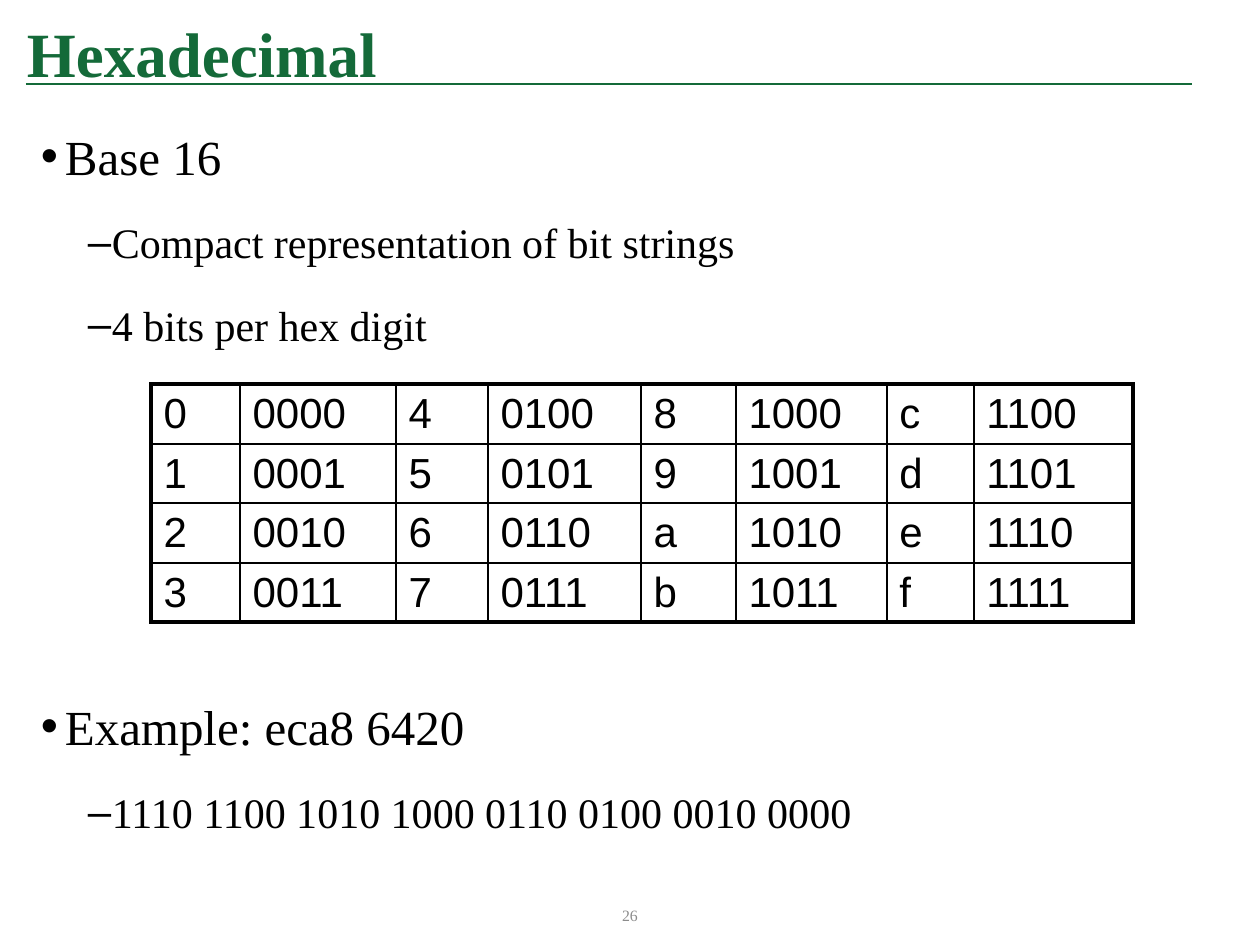
from lxml import etree
from pptx import Presentation
from pptx import util as u
from pptx.dml.color import RGBColor
from pptx.enum import shapes, text
from pptx.oxml.ns import qn

PX = 914400 // 126
SERIF, SANS = "Times New Roman", "Arial"
GREEN, BLACK, GRAY = "146A39", "000000", "8C8C8C"

TITLE = "Hexadecimal"
PAGE_NUMBER = "26"
OUTLINES = [
    (97, 270, [(0, "Base 16"),
               (1, "Compact representation of bit strings"),
               (1, "4 bits per hex digit")]),
    (667, 180, [(0, "Example: eca8 6420"),
                (1, "1110 1100 1010 1000 0110 0100 0010 0000")]),
]
LEVELS = [
    {"bullet": "•", "margin": 24, "size": 28, "before": 7.5},
    {"bullet": "–", "margin": 71, "size": 24, "before": 3.7},
]
HANGING = 24
COLUMN_WIDTHS = [89, 156, 92, 153, 95, 151, 87, 159]
ROW_HEIGHTS = [60, 59, 60, 59]
ROWS = [
    ["0", "0000", "4", "0100", "8", "1000", "c", "1100"],
    ["1", "0001", "5", "0101", "9", "1001", "d", "1101"],
    ["2", "0010", "6", "0110", "a", "1010", "e", "1110"],
    ["3", "0011", "7", "0111", "b", "1011", "f", "1111"],
]
OUTER, GROUP, INNER = 2.25, 1.5, 1


def px(*values):
    return [u.Emu(value * PX) for value in values]


def color(value):
    return RGBColor.from_string(value)


def add_run(paragraph, words, size, font, ink, bold=False):
    run = paragraph.add_run()
    run.text = words
    run.font.size = u.Pt(size)
    run.font.name = font
    run.font.bold = bold
    run.font.color.rgb = color(ink)


def add_text_frame(slide, *box):
    frame = slide.shapes.add_textbox(*px(*box)).text_frame
    frame.word_wrap = True
    frame.margin_left = frame.margin_right = 0
    frame.margin_top = frame.margin_bottom = 0
    return frame


def add_outline(slide, top, height, items):
    frame = add_text_frame(slide, 41, top, 1180, height)
    for index, (level, words) in enumerate(items):
        style = LEVELS[level]
        paragraph = frame.add_paragraph() if index else frame.paragraphs[0]
        paragraph.level = level
        properties = paragraph._p.get_or_add_pPr()
        properties.set("marL", str(style["margin"] * PX))
        properties.set("indent", str(-HANGING * PX))
        etree.SubElement(properties, qn("a:buFont"), typeface=SANS)
        etree.SubElement(properties, qn("a:buChar"), char=style["bullet"])
        paragraph.line_spacing = 1.5
        if index:
            paragraph.space_before = u.Pt(style["before"])
        paragraph.font.size = u.Pt(style["size"])
        add_run(paragraph, words, style["size"], SERIF, BLACK)


def add_border(cell, side, width):
    line = etree.SubElement(cell._tc.get_or_add_tcPr(), qn("a:ln" + side),
                            w=str(u.Pt(width)))
    fill = etree.SubElement(line, qn("a:solidFill"))
    etree.SubElement(fill, qn("a:srgbClr"), val=BLACK)


def vertical_rule(edge):
    if edge in (0, len(COLUMN_WIDTHS)):
        return OUTER
    return INNER if edge % 2 else GROUP


def horizontal_rule(edge):
    return OUTER if edge in (0, len(ROWS)) else INNER


def add_digit_table(slide):
    table = slide.shapes.add_table(
        len(ROWS), len(COLUMN_WIDTHS),
        *px(151, 384, sum(COLUMN_WIDTHS), sum(ROW_HEIGHTS))).table
    table.first_row = table.horz_banding = False
    for column, width in zip(table.columns, COLUMN_WIDTHS):
        column.width = u.Emu(width * PX)
    for row, height in zip(table.rows, ROW_HEIGHTS):
        row.height = u.Emu(height * PX)
    for r, values in enumerate(ROWS):
        for c, value in enumerate(values):
            cell = table.cell(r, c)
            cell.margin_top, cell.margin_bottom = px(4, 4)
            cell.vertical_anchor = text.MSO_ANCHOR.MIDDLE
            add_border(cell, "L", vertical_rule(c))
            add_border(cell, "R", vertical_rule(c + 1))
            add_border(cell, "T", horizontal_rule(r))
            add_border(cell, "B", horizontal_rule(r + 1))
            cell.fill.background()
            add_run(cell.text_frame.paragraphs[0], value, 24, SANS, BLACK)


def main():
    presentation = Presentation()
    presentation.slide_width, presentation.slide_height = px(1260, 945)
    slide = presentation.slides.add_slide(presentation.slide_layouts[6])

    rule = slide.shapes.add_connector(
        shapes.MSO_CONNECTOR.STRAIGHT, *px(26, 84, 1192, 84))
    rule.line.color.rgb = color(GREEN)
    rule.line.width = u.Pt(1)
    etree.SubElement(rule._element.spPr, qn("a:effectLst"))

    for outline in OUTLINES:
        add_outline(slide, *outline)

    title = add_text_frame(slide, 27, 15, 1132, 72)
    add_run(title.paragraphs[0], TITLE, 36, SERIF, GREEN, bold=True)

    footer = add_text_frame(slide, 470, 890, 320, 50)
    footer.vertical_anchor = text.MSO_ANCHOR.MIDDLE
    footer.paragraphs[0].alignment = text.PP_ALIGN.CENTER
    add_run(footer.paragraphs[0], PAGE_NUMBER, 9, SERIF, GRAY)

    add_digit_table(slide)
    presentation.save("out.pptx")


if __name__ == "__main__":
    main()
